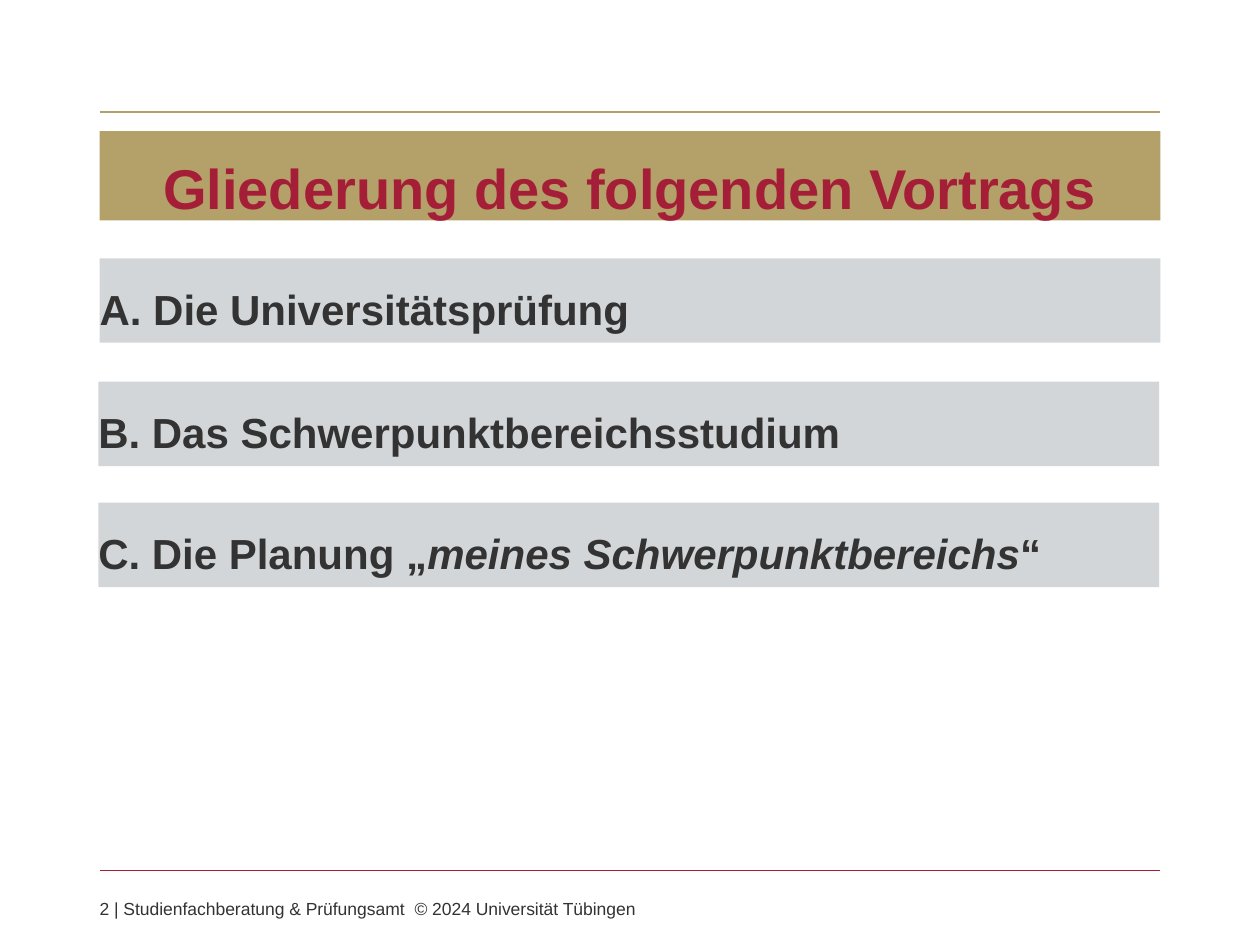
from lxml import etree
from pptx import Presentation
from pptx.dml.color import RGBColor
from pptx.enum.shapes import MSO_CONNECTOR as Connector, MSO_SHAPE as Shape
from pptx.enum.text import MSO_ANCHOR as Anchor, PP_ALIGN as Align
from pptx.oxml.ns import qn
from pptx.util import Inches, Pt


def color(value):
    return RGBColor.from_string(value)


class SlideBuilder:
    FONT = "Arial"
    GOLD, RED, GREY, DARK = "B4A069", "A51E37", "D3D6D8", "333333"
    LEFT, WIDTH = 0.79, 8.42

    def __init__(self, page):
        self.page = page

    def rule(self, top, line_color):
        start, end = Inches(self.LEFT), Inches(self.LEFT + self.WIDTH)
        rule = self.page.shapes.add_connector(
            Connector.STRAIGHT, start, Inches(top), end, Inches(top))
        rule.line.color.rgb = color(line_color)
        rule.line.width = Pt(0.75)
        etree.SubElement(rule._element.spPr, qn("a:effectLst"))

    def add_text(self, box, spans, size, text_color, bold=False,
                 align=Align.LEFT, anchor=Anchor.TOP, spacing=1.0):
        frame = box.text_frame
        frame.word_wrap = True
        frame.vertical_anchor = anchor
        frame.margin_left = frame.margin_right = Inches(0)
        frame.margin_top = frame.margin_bottom = Inches(0)
        para = frame.paragraphs[0]
        para.alignment = align
        para.line_spacing = spacing
        for text, italic in spans:
            span = para.add_run()
            span.text = text
            span.font.name = self.FONT
            span.font.size = Pt(size)
            span.font.bold = bold
            span.font.italic = italic
            span.font.color.rgb = color(text_color)

    def bar(self, left, top, height, fill, spans, size, text_color, **layout):
        box = self.page.shapes.add_shape(
            Shape.RECTANGLE, Inches(left), Inches(top),
            Inches(self.WIDTH), Inches(height))
        box.shadow.inherit = False
        box.fill.solid()
        box.fill.fore_color.rgb = color(fill)
        box.line.fill.background()
        self.add_text(box, spans, size, text_color, bold=True, spacing=1.5, **layout)

    def title(self, text):
        self.bar(self.LEFT, 1.04, 0.71, self.GOLD, [(text, False)], 32, self.RED,
                 align=Align.CENTER, anchor=Anchor.BOTTOM)

    def section(self, left, top, spans):
        self.bar(left, top, 0.67, self.GREY, spans, 24, self.DARK)

    def footer(self, text):
        box = self.page.shapes.add_textbox(
            Inches(self.LEFT), Inches(7.13), Inches(self.WIDTH), Inches(0.17))
        self.add_text(box, [(text, False)], 10, self.DARK)


def main():
    deck = Presentation()
    deck.slide_width, deck.slide_height = Inches(10), Inches(7.5)
    builder = SlideBuilder(deck.slides.add_slide(deck.slide_layouts[6]))

    builder.rule(0.89, builder.GOLD)
    builder.rule(6.91, builder.RED)
    builder.title("Gliederung des folgenden Vortrags")
    builder.footer("2 | Studienfachberatung & Prüfungsamt\t© 2024 Universität Tübingen")

    sections = [
        (0.79, 2.05, [("A. Die Universitätsprüfung", False)]),
        (0.78, 3.03, [("B. Das Schwerpunktbereichsstudium", False)]),
        (0.78, 3.99, [("C. Die Planung „", False),
                      ("meines Schwerpunktbereichs", True),
                      ("“", False)]),
    ]
    for left, top, spans in sections:
        builder.section(left, top, spans)

    deck.save("out.pptx")


if __name__ == "__main__":
    main()
